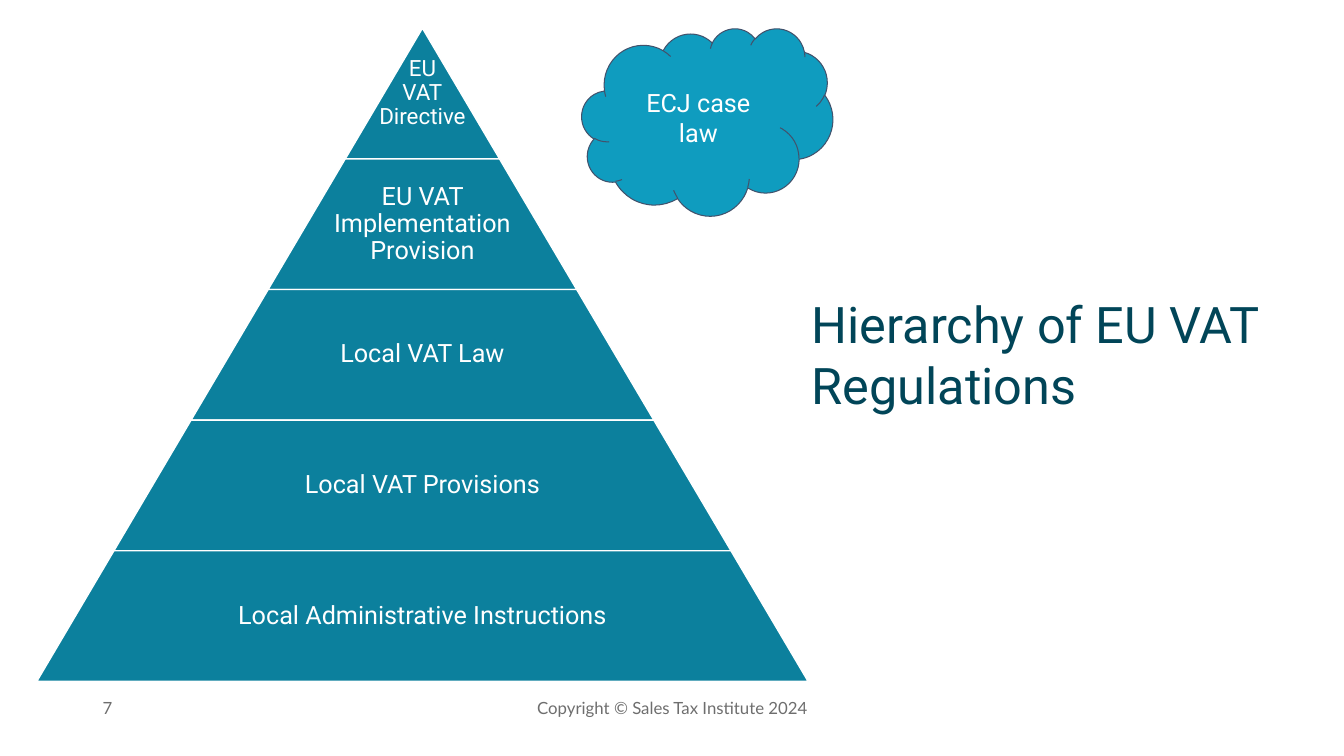
import pptx
import pptx.util
from pptx.dml.color import RGBColor
from pptx.enum.shapes import MSO_SHAPE
from pptx.enum.text import MSO_ANCHOR, MSO_AUTO_SIZE, PP_ALIGN
from pptx.util import Inches


class Theme:
    white = RGBColor.from_string("FFFFFF")
    teal = RGBColor.from_string("0C809D")
    sky = RGBColor.from_string("0F9CBF")
    slate = RGBColor.from_string("42526C")
    navy = RGBColor.from_string("014558")
    grey = RGBColor.from_string("6E6E6E")
    head, small = "Roboto", "Lato"
    title, body, tip, foot = 36, 18, 16, 12


def write(shape, text, size, color, align=PP_ALIGN.CENTER, font=Theme.head,
          anchor=MSO_ANCHOR.MIDDLE, pad=None):
    """Fill a shape with one formatted paragraph and return it."""
    frame = shape.text_frame
    frame.word_wrap = True
    frame.auto_size = MSO_AUTO_SIZE.NONE
    frame.vertical_anchor = anchor
    if pad is not None:
        frame.margin_left = frame.margin_right = Inches(pad)
        frame.margin_top = frame.margin_bottom = Inches(pad)
    para = frame.paragraphs[0]
    para.text = text
    para.alignment = align
    para.font.name = font
    para.font.size = pptx.util.Pt(size)
    para.font.color.rgb = color
    return para


def paint(shape, fill, line, width):
    shape.shadow.inherit = False
    shape.fill.solid()
    shape.fill.fore_color.rgb = fill
    shape.line.color.rgb = line
    shape.line.width = pptx.util.Pt(width)


deck = pptx.Presentation()
deck.slide_width, deck.slide_height = Inches(13.33), Inches(7.5)
slide = deck.slides.add_slide(deck.slide_layouts[5])
shapes = slide.shapes

# Footer
for text, left, width, align in [
    ("Copyright © Sales Tax Institute 2024", 4.42, 4.5, PP_ALIGN.CENTER),
    ("7", 0.92, 3, PP_ALIGN.LEFT),
]:
    box = shapes.add_textbox(Inches(left), Inches(6.82), Inches(width), Inches(0.4))
    write(box, text, Theme.foot, Theme.grey, align, Theme.small)

# Pyramid: each tier is wider than the one above by the same step
mid, top, high, step = 4.19, 0.28, 1.296, 1.53
tiers = [
    "EU\nVAT\nDirective",
    "EU VAT Implementation Provision",
    "Local VAT Law",
    "Local VAT Provisions",
    "Local Administrative Instructions",
]
for row, text in enumerate(tiers):
    y = top + row * high
    wide = step * (row + 1)
    tier = shapes.add_shape(MSO_SHAPE.TRAPEZOID, Inches(mid - wide / 2), Inches(y),
                            Inches(wide), Inches(high))
    tier.adjustments[0] = step / 2 / high
    paint(tier, Theme.teal, Theme.white, 1)

    span = wide * 0.65 if row else wide
    label = shapes.add_textbox(Inches(mid - span / 2), Inches(y),
                               Inches(span), Inches(high))
    size = Theme.body if row else Theme.tip
    para = write(label, text, size, Theme.white, pad=0.03)
    para.line_spacing = 0.9

# Case law cloud
cloud = shapes.add_shape(MSO_SHAPE.CLOUD, Inches(5.77), Inches(0.28),
                         Inches(2.49), Inches(1.86))
paint(cloud, Theme.sky, Theme.slate, 0.75)
write(cloud, "ECJ case law", Theme.body, Theme.white)

# Title
title = shapes.title
title.left, title.top = Inches(7.95), Inches(2.86)
title.width, title.height = Inches(5.01), Inches(1.31)
write(title, "Hierarchy of EU VAT Regulations", Theme.title, Theme.navy,
      PP_ALIGN.LEFT, anchor=MSO_ANCHOR.TOP)

deck.save("out.pptx")
